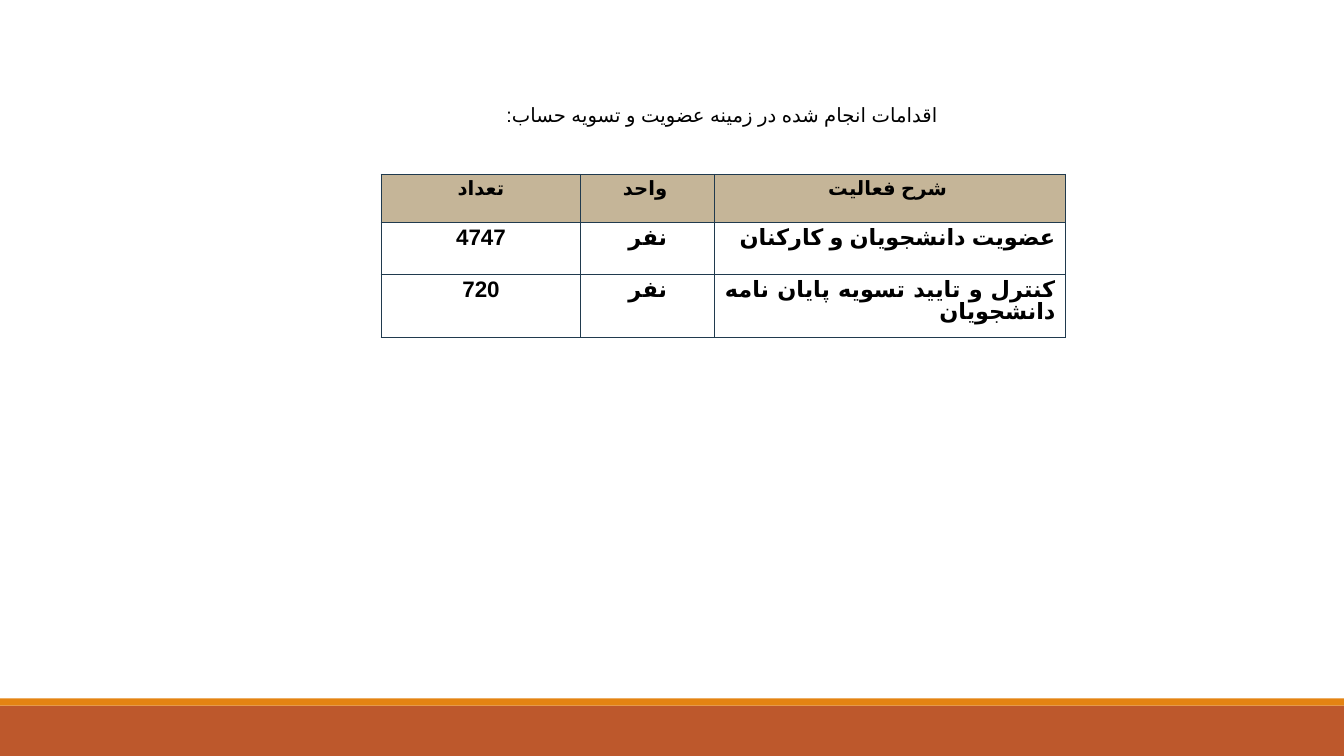
from dataclasses import dataclass

from lxml.etree import SubElement
from pptx import Presentation
from pptx.dml.color import RGBColor
from pptx.enum.shapes import MSO_SHAPE
from pptx.enum.text import MSO_AUTO_SIZE, PP_ALIGN
from pptx.oxml.ns import qn
from pptx.slide import Slide
from pptx.table import _Cell
from pptx.text.text import TextFrame
from pptx.util import Emu, Pt

EMU_PER_PX = 9144
PAGE_WIDTH, PAGE_HEIGHT = 1333, 750
BORDER = "203A4E"
HEADER_FILL = "C5B598"
COLUMN_WIDTHS = (198, 133, 348)
ROW_HEIGHTS = (48, 51, 63)
HEADERS = ("تعداد", "واحد ", "شرح فعالیت ")
ACTIVITIES = (
    ("4747", "نفر", "عضویت دانشجویان و کارکنان "),
    ("720", "نفر", "کنترل و تایید تسویه پایان نامه دانشجویان "),
)


@dataclass(frozen=True)
class Band:
    top: int
    height: int
    fill: str


BANDS = (Band(700, 50, "BD582C"), Band(693, 7, "E48312"))


def px(length: int) -> Emu:
    return Emu(length * EMU_PER_PX)


def color(value: str) -> RGBColor:
    return RGBColor.from_string(value)


def write(frame: TextFrame, text: str, *, size: int, align: PP_ALIGN,
          bold: bool = False, rtl: bool = False, spacing: float = 1.0) -> None:
    frame.word_wrap = True
    para = frame.paragraphs[0]
    para.alignment = align
    para.line_spacing = spacing
    para.space_after = Pt(8)
    if rtl:
        para._p.get_or_add_pPr().set("rtl", "1")
    span = para.add_run()
    span.text = text
    span.font.name = "Calibri"
    span.font.size = Pt(size)
    span.font.bold = bold
    span.font.color.rgb = color("000000")
    properties = span._r.get_or_add_rPr()
    properties.set("lang", "fa-IR")
    SubElement(properties, qn("a:cs"), typeface="Arial")


def draw_band(page: Slide, band: Band) -> None:
    shape = page.shapes.add_shape(
        MSO_SHAPE.RECTANGLE, 0, px(band.top), px(PAGE_WIDTH), px(band.height))
    shape.shadow.inherit = False
    shape.fill.solid()
    shape.fill.fore_color.rgb = color(band.fill)
    shape.line.fill.background()


def draw_borders(cell: _Cell) -> None:
    properties = cell._tc.get_or_add_tcPr()
    for side in ("a:lnL", "a:lnR", "a:lnT", "a:lnB"):
        line = SubElement(properties, qn(side), w=str(Pt(1)))
        fill = SubElement(line, qn("a:solidFill"))
        SubElement(fill, qn("a:srgbClr"), val=BORDER)


def draw_table(page: Slide) -> None:
    rows = (HEADERS, *ACTIVITIES)
    table = page.shapes.add_table(
        len(rows), len(HEADERS), px(378), px(173),
        px(sum(COLUMN_WIDTHS)), px(sum(ROW_HEIGHTS))).table
    for column, width in zip(table.columns, COLUMN_WIDTHS):
        column.width = px(width)
    for row, height in zip(table.rows, ROW_HEIGHTS):
        row.height = px(height)
    for row_index, texts in enumerate(rows):
        is_header = row_index == 0
        for column_index, text in enumerate(texts):
            cell = table.cell(row_index, column_index)
            draw_borders(cell)
            if is_header:
                cell.fill.solid()
                cell.fill.fore_color.rgb = color(HEADER_FILL)
            else:
                cell.fill.background()
            is_description = not is_header and column_index == len(texts) - 1
            write(cell.text_frame, text, size=14 if is_header else 16, bold=True,
                  align=PP_ALIGN.JUSTIFY if is_description else PP_ALIGN.CENTER,
                  rtl=not is_header, spacing=0.9)


def main() -> None:
    """Build the membership and clearance slide."""
    deck = Presentation()
    deck.slide_width, deck.slide_height = px(PAGE_WIDTH), px(PAGE_HEIGHT)
    page = deck.slides.add_slide(deck.slide_layouts[6])
    for band in BANDS:
        draw_band(page, band)
    box = page.shapes.add_textbox(px(274), px(96), px(666), px(35))
    box.text_frame.auto_size = MSO_AUTO_SIZE.SHAPE_TO_FIT_TEXT
    write(box.text_frame, "اقدامات انجام شده در زمینه عضویت و تسویه حساب:",
          size=14, align=PP_ALIGN.RIGHT, rtl=True, spacing=1.07)
    draw_table(page)
    deck.save("out.pptx")


if __name__ == "__main__":
    main()
